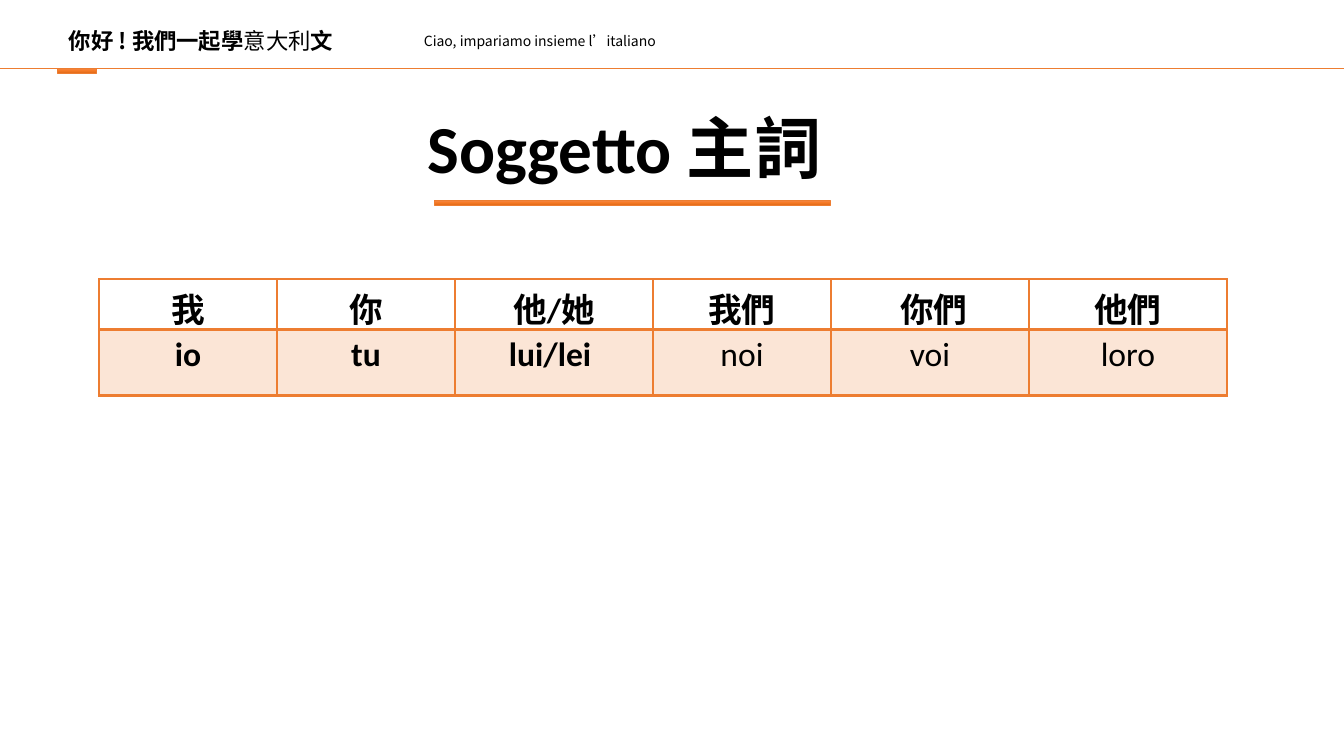
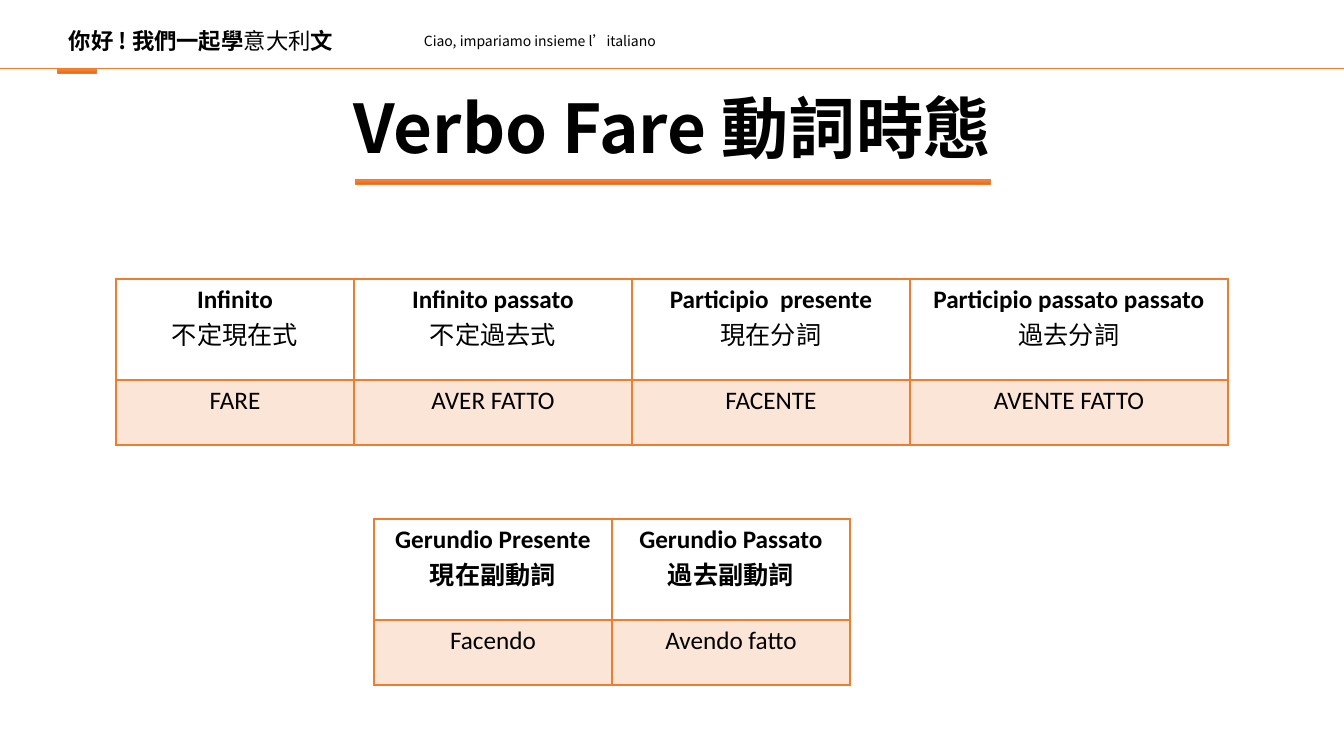
import copy

import lxml.etree
import pptx
import pptx.dml.color
import pptx.enum.shapes
import pptx.enum.text
import pptx.oxml.ns
import pptx.util

PX = 914400 / 100.8
ORANGE, PEACH, BLACK = "ED7D31", "FBE5D6", "000000"
GRADIENT = ["F18C57", "F67B28", "E56C19"]
LATIN, CJK = "Calibri", "Noto Sans CJK SC"
qn = pptx.oxml.ns.qn
rgb = pptx.dml.color.RGBColor.from_string


def px(*lengths):
    return [pptx.util.Emu(round(n * PX)) for n in lengths]


def style(font, size, name, bold=False):
    font.size, font.name, font.bold = pptx.util.Pt(size), name, bold
    font.color.rgb = rgb(BLACK)


# Header: each text box is a position and its runs (text, font, bold)
header = [
    ((59, 22, 348, 37), 16,
     [("你好 ! 我們一起學", CJK, True), ("意大利", "Arial", False), ("文", CJK, True)]),
    ((414, 28, 848, 27), 10, [("Ciao, impariamo insieme l’italiano", CJK, False)]),
]

# Tables: each column is a width, header lines and a value, with bold flags
slides = [
    {
        "title": "Soggetto 主詞 ", "font": LATIN, "box": (0, 101, 1264, 92),
        "underline": (434, 200, 396, 5),
        "tables": [
            {"at": (99, 279), "rows": (50, 66), "size": 24, "bottom": 2, "columns": [
                (178, [("我", True)], ("io", True)),
                (178, [("你", True)], ("tu", True)),
                (198, [("他/她", True)], ("lui/lei ", True)),
                (178, [("我們", True)], ("noi", False)),
                (198, [(" 你們", True)], ("voi", False)),
                (198, [("他們", True)], ("loro", False)),
            ]},
        ],
    },
    {
        "title": "Verbo Fare 動詞時態", "font": CJK, "box": (0, 81, 1344, 92),
        "underline": (355, 179, 635, 5),
        "tables": [
            {"at": (116, 279), "rows": (101, 65), "size": 18, "bottom": 1, "columns": [
                (238, [("Infinito", True), ("不定現在式", False)], ("FARE", False)),
                (278, [("Infinito passato", True), ("不定過去式", False)],
                 ("AVER FATTO", False)),
                (278, [("Participio  presente", True), ("現在分詞", False)],
                 ("FACENTE", False)),
                (318, [("Participio passato passato", True), ("過去分詞", False)],
                 ("AVENTE FATTO", False)),
            ]},
            {"at": (374, 519), "rows": (101, 65), "size": 18, "bottom": 1, "columns": [
                (238, [("Gerundio Presente", True), ("現在副動詞", True)],
                 ("Facendo", False)),
            ]},
            {"at": (612, 519), "rows": (101, 65), "size": 18, "bottom": 1, "columns": [
                (238, [("Gerundio Passato", True), ("過去副動詞", True)],
                 ("Avendo fatto", False)),
            ]},
        ],
    },
]

prs = pptx.Presentation()
prs.slide_width, prs.slide_height = px(1344, 756)

for data in slides:
    slide = prs.slides.add_slide(prs.slide_layouts[5])

    # Title
    sp = slide.shapes.title
    sp.left, sp.top, sp.width, sp.height = px(*data["box"])
    tf = sp.text_frame
    tf.text = data["title"]
    tf.auto_size = pptx.enum.text.MSO_AUTO_SIZE.NONE
    tf.vertical_anchor = pptx.enum.text.MSO_ANCHOR.TOP
    p = tf.paragraphs[0]
    p.alignment = pptx.enum.text.PP_ALIGN.CENTER
    style(p.font, 48, data["font"], True)

    # Header texts
    for box, size, runs in header:
        tf = slide.shapes.add_textbox(*px(*box)).text_frame
        tf.word_wrap = True
        for text, name, bold in runs:
            r = tf.paragraphs[0].add_run()
            r.text = text
            style(r.font, size, name, bold)

    # Header rule
    line = slide.shapes.add_connector(
        pptx.enum.shapes.MSO_CONNECTOR.STRAIGHT, *px(0, 68, 1344, 68))
    line.line.color.rgb = rgb(ORANGE)
    line.line.width = pptx.util.Pt(0.5)
    lxml.etree.SubElement(line._element.spPr, qn("a:effectLst"))

    # Gradient bars: header accent and title underline
    for box in [(57, 68, 39, 5), data["underline"]]:
        sp = slide.shapes.add_shape(
            pptx.enum.shapes.MSO_SHAPE.RECTANGLE, *px(*box))
        sp.shadow.inherit = False
        sp.line.color.rgb = rgb(ORANGE)
        sp.line.width = pptx.util.Pt(0.5)
        sp.fill.gradient()
        sp.fill.gradient_angle = 270
        stops = sp._element.spPr.find(".//" + qn("a:gsLst"))
        stops.append(copy.deepcopy(stops[0]))
        for i, stop in enumerate(sp.fill.gradient_stops):
            stop.position = i / 2
            stop.color.rgb = rgb(GRADIENT[i])

    # Tables
    for spec in data["tables"]:
        columns, rows = spec["columns"], spec["rows"]
        width = sum(column[0] for column in columns)
        table = slide.shapes.add_table(
            2, len(columns), *px(*spec["at"], width, sum(rows))).table
        table.first_row = table.horz_banding = False
        for row, height in zip(table.rows, rows):
            row.height = px(height)[0]
        for c, (width, heading, value) in enumerate(columns):
            table.columns[c].width = px(width)[0]
            for r, lines in enumerate([heading, [value]]):
                cell = table.cell(r, c)
                tf = cell.text_frame
                tf.text = "\n".join(text for text, bold in lines)
                for p, (text, bold) in zip(tf.paragraphs, lines):
                    p.alignment = pptx.enum.text.PP_ALIGN.CENTER
                    style(p.font, spec["size"], LATIN, bold)

                # Borders, with a heavier line between the rows
                top, bottom = [(1, 2), (2, spec["bottom"])][r]
                tc_pr = cell._tc.get_or_add_tcPr()
                for side, weight in zip("LRTB", (1, 1, top, bottom)):
                    ln = lxml.etree.SubElement(
                        tc_pr, qn("a:ln" + side), w=str(pptx.util.Pt(weight)))
                    fill = lxml.etree.SubElement(ln, qn("a:solidFill"))
                    lxml.etree.SubElement(fill, qn("a:srgbClr"), val=ORANGE)
                if r == 0:
                    cell.fill.background()
                else:
                    cell.fill.solid()
                    cell.fill.fore_color.rgb = rgb(PEACH)

prs.save("out.pptx")
